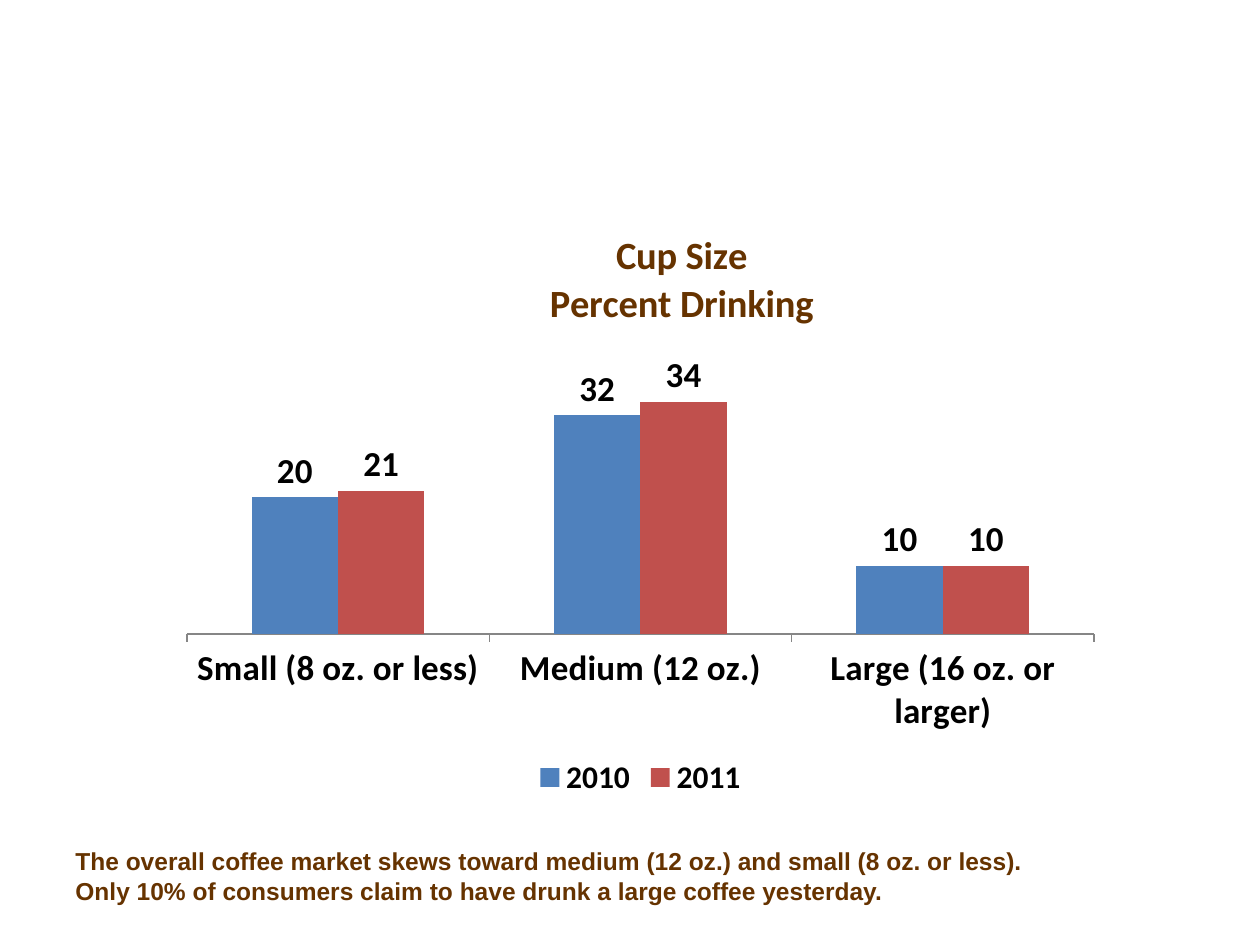
from lxml.etree import SubElement
from pptx import Presentation
from pptx.chart.data import CategoryChartData
from pptx.dml.color import RGBColor
from pptx.enum.chart import XL_CHART_TYPE, XL_LABEL_POSITION, XL_LEGEND_POSITION, XL_TICK_MARK
from pptx.enum.text import MSO_AUTO_SIZE
from pptx.oxml.ns import qn
from pptx.util import Emu, Pt

SCALE = 914400 / 126
BROWN = RGBColor(0x66, 0x33, 0x00)
BLACK = RGBColor(0x00, 0x00, 0x00)
GRAY = RGBColor(0x86, 0x86, 0x86)
BLUE = RGBColor(0x4F, 0x81, 0xBD)
RED = RGBColor(0xC0, 0x50, 0x4D)


def write_lines(frame, text, size, color, face, bold=True):
    for index, line in enumerate(text.split("\n")):
        paragraph = frame.add_paragraph() if index else frame.paragraphs[0]
        run = paragraph.add_run()
        run.text = line
        run.font.size = Pt(size)
        run.font.color.rgb = color
        run.font.name = face
        run.font.bold = bold


def set_layout(parent, **settings):
    layout = parent.find(qn("c:layout"))
    if layout is None:
        layout = parent.makeelement(qn("c:layout"))
        parent.insert(0, layout)
    manual = SubElement(layout, qn("c:manualLayout"))
    for tag, value in settings.items():
        SubElement(manual, qn(f"c:{tag}")).set("val", str(value))


prs = Presentation()
prs.slide_width, prs.slide_height = (Emu(round(n * SCALE)) for n in (1260, 945))
slide = prs.slides.add_slide(prs.slide_layouts[6])

cup_sizes = CategoryChartData()
cup_sizes.categories = ["Small (8 oz. or less)", "Medium (12 oz.)", "Large (16 oz. or larger)"]
cup_sizes.add_series("2010", (20, 32, 10))
cup_sizes.add_series("2011", (21, 34, 10))
chart_box = [Emu(round(n * SCALE)) for n in (168, 221, 945, 582)]
chart = slide.shapes.add_chart(XL_CHART_TYPE.COLUMN_CLUSTERED, *chart_box, cup_sizes).chart
chart.font.name = "Calibri"
chart.font.size = Pt(10)
chart.font.color.rgb = BLACK

chart.has_title = True
write_lines(chart.chart_title.text_frame, "Cup Size\nPercent Drinking",
            size=22, color=BROWN, face="Calibri")
chart.chart_title.include_in_layout = False
set_layout(chart.chart_title.element, xMode="edge", yMode="edge", x=0.4, y=0.01)
set_layout(chart.element.find(".//" + qn("c:plotArea")), layoutTarget="inner",
           xMode="edge", yMode="edge", x=0.02, y=0.24, w=0.96, h=0.47)

columns = chart.plots[0]
columns.gap_width = 150
columns.overlap = 0
columns.vary_by_categories = False
for year, color in zip(columns.series, (BLUE, RED)):
    year.format.fill.solid()
    year.format.fill.fore_color.rgb = color
    labels = year.data_labels
    labels.show_value = True
    labels.position = XL_LABEL_POSITION.OUTSIDE_END
    labels.font.size = Pt(20)
    labels.font.bold = True

sizes_axis = chart.category_axis
sizes_axis.major_tick_mark = XL_TICK_MARK.OUTSIDE
sizes_axis.format.line.color.rgb = GRAY
sizes_axis.tick_labels.font.size = Pt(20)
sizes_axis.tick_labels.font.bold = True

percent_axis = chart.value_axis
percent_axis.minimum_scale = 0
percent_axis.maximum_scale = 40
percent_axis.has_major_gridlines = False
percent_axis.visible = False

chart.has_legend = True
chart.legend.position = XL_LEGEND_POSITION.BOTTOM
chart.legend.include_in_layout = False
chart.legend.font.size = Pt(18)
chart.legend.font.bold = True

takeaway_box = [Emu(round(n * SCALE)) for n in (63, 840, 987, 72)]
takeaway = slide.shapes.add_textbox(*takeaway_box).text_frame
takeaway.word_wrap = True
takeaway.auto_size = MSO_AUTO_SIZE.SHAPE_TO_FIT_TEXT
write_lines(takeaway,
            "The overall coffee market skews toward medium (12 oz.) and small (8 oz. or less).\n"
            "Only 10% of consumers claim to have drunk a large coffee yesterday.",
            size=14, color=BROWN, face="Arial")

prs.save("out.pptx")
